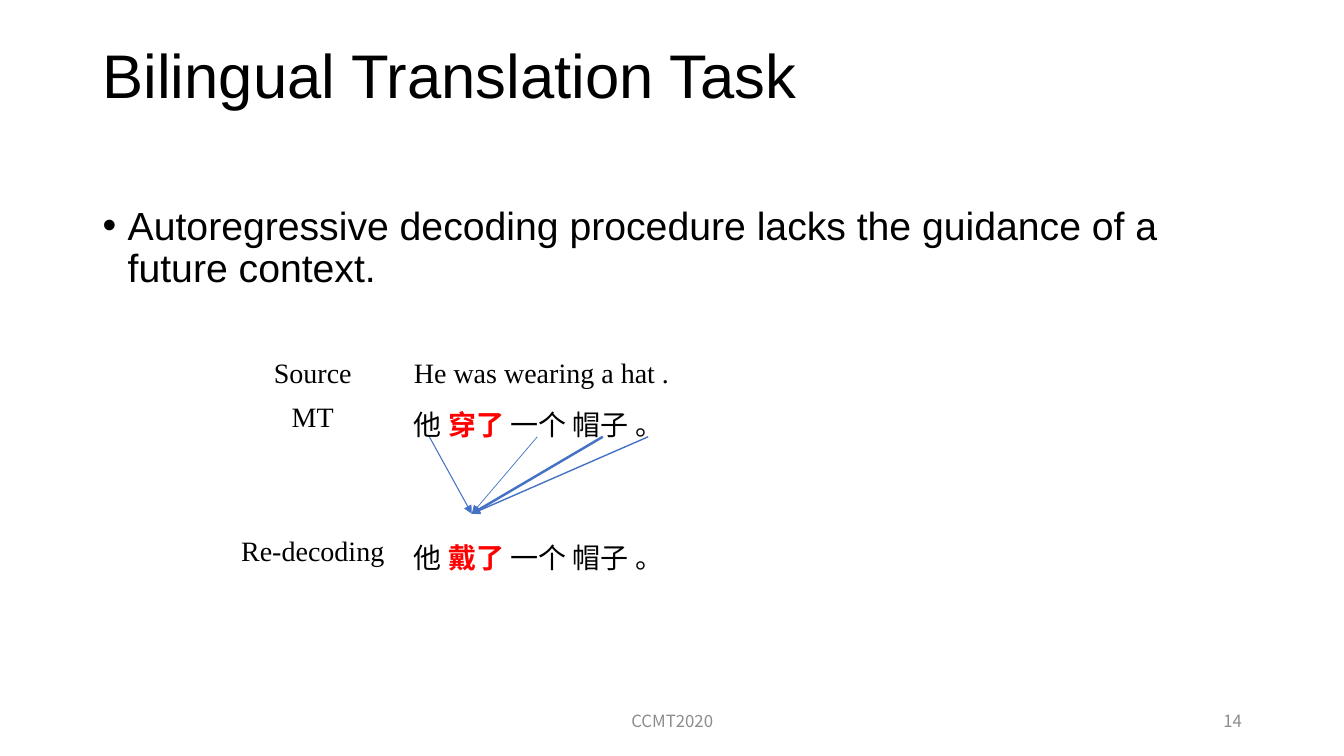
from dataclasses import dataclass, field
from typing import Any

import pptx
import pptx.dml.color
import pptx.enum.shapes
import pptx.enum.text
import pptx.oxml
import pptx.oxml.ns
import pptx.util

Pt = pptx.util.Pt
ALIGN = pptx.enum.text.PP_ALIGN
ANCHOR = pptx.enum.text.MSO_ANCHOR
HEX = {"black": "000000", "red": "FF0000", "blue": "4472C4", "gray": "8C8C8C"}
SANS, CJK, SERIF = "Arial", "Noto Sans CJK SC", "Times New Roman"


@dataclass
class Run:
    text: str
    font: str
    size: float
    color: str = "black"
    bold: bool = False


@dataclass
class Box:
    left: float
    top: float
    width: float
    height: float
    run: Run
    form: dict[str, Any] = field(default_factory=dict)
    anchor: Any = ANCHOR.TOP
    bullet: bool = False


@dataclass
class Arrow:
    start: float
    weight: float


def tint(name: str) -> pptx.dml.color.RGBColor:
    return pptx.dml.color.RGBColor.from_string(HEX[name])


def element(tag: str, **attrs: str) -> Any:
    node = pptx.oxml.parse_xml(f"<{tag} {pptx.oxml.ns.nsdecls('a')}/>")
    for key, value in attrs.items():
        node.set(key, value)
    return node


def style(item: Any, form: dict[str, Any]) -> None:
    for key, value in form.items():
        setattr(item, key, value)


def write(para: Any, runs: list[Run], form: dict[str, Any]) -> None:
    style(para, form)
    for run in runs:
        part = para.add_run()
        part.text = run.text
        style(part.font, {"name": run.font, "size": Pt(run.size), "bold": run.bold})
        part.font.color.rgb = tint(run.color)
        if run.font == CJK:
            latin = part.font._element.find(pptx.oxml.ns.qn("a:latin"))
            latin.addnext(element("a:ea", typeface=CJK))


def add_box(slide: Any, box: Box) -> None:
    shape = slide.shapes.add_textbox(Pt(box.left), Pt(box.top), Pt(box.width), Pt(box.height))
    frame = shape.text_frame
    style(frame, {"word_wrap": True, "vertical_anchor": box.anchor})
    para = frame.paragraphs[0]
    if box.bullet:
        props = para._p.get_or_add_pPr()
        style_attrs = {"marL": Pt(18), "indent": Pt(-18)}
        for key, value in style_attrs.items():
            props.set(key, str(value))
        props.append(element("a:buFont", typeface=SANS))
        props.append(element("a:buChar", char="•"))
    write(para, [box.run], box.form)


def add_arrow(slide: Any, arrow: Arrow) -> None:
    """Draw one arrow from the MT line to the shared focus word."""
    line = slide.shapes.add_connector(
        pptx.enum.shapes.MSO_CONNECTOR.STRAIGHT,
        Pt(arrow.start), Pt(312), Pt(337), Pt(367))
    line.line.color.rgb = tint("blue")
    line.line.width = Pt(arrow.weight)
    line.line._get_or_add_ln().append(element("a:tailEnd", type="triangle"))
    line._element.spPr.append(element("a:effectLst"))


def add_grid(slide: Any, rows: list[tuple[str, list[Run]]]) -> None:
    widths, heights = (130, 227.5), (29.5, 95.5, 29.5)
    shape = slide.shapes.add_table(
        len(rows), len(widths), Pt(158.4), Pt(252.7), Pt(sum(widths)), Pt(sum(heights)))
    grid = shape.table
    style(grid, {"first_row": False, "horz_banding": False})
    for column, width in zip(grid.columns, widths):
        column.width = Pt(width)
    for index, (label, runs) in enumerate(rows):
        grid.rows[index].height = Pt(heights[index])
        pairs = [([Run(label, SERIF, 20)], ALIGN.CENTER), (runs, ALIGN.LEFT)]
        for side, (words, align) in enumerate(pairs):
            cell = grid.cell(index, side)
            cell.fill.background()
            write(cell.text_frame.paragraphs[0], words, {"alignment": align})


def hat(verb: str) -> list[Run]:
    """Give the Chinese sentence with its verb marked."""
    return [Run("他 ", CJK, 20), Run(verb, CJK, 20, "red", True),
            Run(" 一个 帽子 。", CJK, 20)]


BOXES = [
    Box(66.2, 28.8, 543.6, 69, Run("Bilingual Translation Task", SANS, 44),
        {"line_spacing": 0.9}),
    Box(66.2, 144, 828, 342.7,
        Run("Autoregressive decoding procedure lacks the guidance of a future context.", SANS, 28),
        {"line_spacing": 0.9}, bullet=True),
    Box(678.2, 500.4, 216, 28.8, Run("14", CJK, 12, "gray"),
        {"alignment": ALIGN.RIGHT}, ANCHOR.MIDDLE),
    Box(318.2, 500.4, 324, 28.8, Run("CCMT2020", CJK, 12, "gray"),
        {"alignment": ALIGN.CENTER}, ANCHOR.MIDDLE),
]
ARROWS = [Arrow(306.7, 0.75), Arrow(383.8, 0.5), Arrow(463, 1), Arrow(430.6, 1.75)]
ROWS = [
    ("Source", [Run("He was wearing a hat .", SERIF, 20)]),
    ("MT", hat("穿了")),
    ("Re-decoding", hat("戴了")),
]


def main() -> None:
    deck = pptx.Presentation()
    style(deck, {"slide_width": Pt(960), "slide_height": Pt(540)})
    slide = deck.slides.add_slide(deck.slide_layouts[6])
    for box in BOXES:
        add_box(slide, box)
    for arrow in ARROWS:
        add_arrow(slide, arrow)
    add_grid(slide, ROWS)
    deck.save("out.pptx")


if __name__ == "__main__":
    main()
